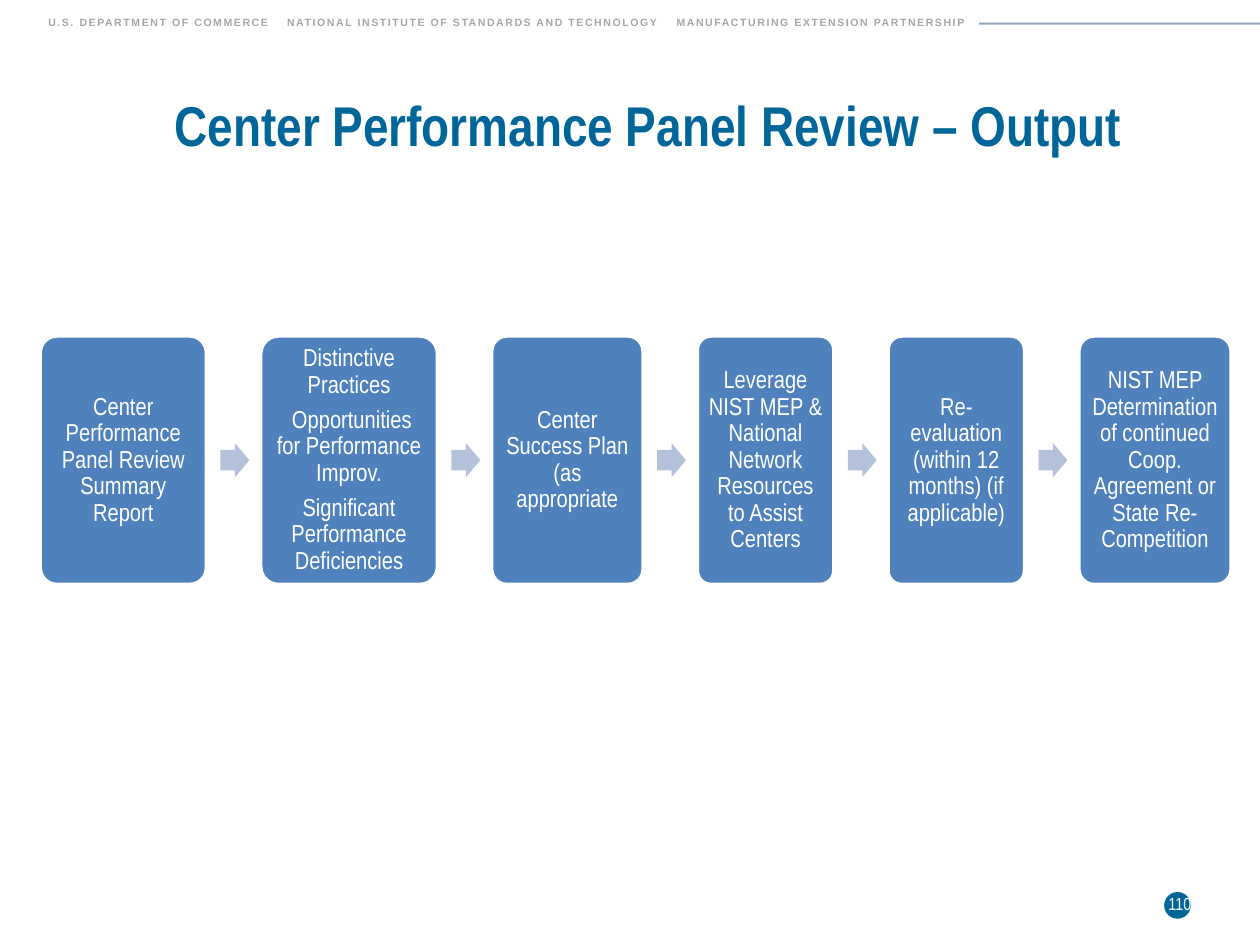
from lxml import etree
from pptx import Presentation
from pptx.dml.color import RGBColor
from pptx.enum.shapes import MSO_CONNECTOR, MSO_SHAPE
from pptx.enum.text import MSO_ANCHOR, MSO_AUTO_SIZE, PP_ALIGN
from pptx.oxml.ns import qn
from pptx.util import Pt

CENTER = PP_ALIGN.CENTER
MIDDLE, TOP = MSO_ANCHOR.MIDDLE, MSO_ANCHOR.TOP
NO_AUTOFIT = MSO_AUTO_SIZE.NONE
STRAIGHT = MSO_CONNECTOR.STRAIGHT
ELLIPSE, ROUNDED, ARROW = MSO_SHAPE.OVAL, MSO_SHAPE.ROUNDED_RECTANGLE, MSO_SHAPE.RIGHT_ARROW
NARROW = "Arial Narrow"


def color(value):
    return RGBColor.from_string(value)


def add_run(paragraph, text, size, font_name, hex_color, bold=False):
    run = paragraph.add_run()
    run.text = text
    run.font.size = Pt(size)
    run.font.name = font_name
    run.font.bold = bold
    run.font.color.rgb = color(hex_color)
    return run


presentation = Presentation()
presentation.slide_width, presentation.slide_height = Pt(720), Pt(540)
slide = presentation.slides.add_slide(presentation.slide_layouts[5])
shapes = slide.shapes

rule = shapes.add_connector(STRAIGHT, Pt(559.5), Pt(13.5), Pt(720), Pt(13.5))
rule.line.color.rgb = color("1F497D")
rule.line.width = Pt(1.25)
rule_color = rule.line._ln.find(".//" + qn("a:srgbClr"))
etree.SubElement(rule_color, qn("a:alpha"), val="50000")
etree.SubElement(rule._element.spPr, qn("a:effectLst"))

header = shapes.add_textbox(Pt(20.5), Pt(5.75), Pt(569), Pt(14.5))
header.text_frame.word_wrap = True
paragraph = header.text_frame.paragraphs[0]
tab_list = etree.SubElement(paragraph._p.get_or_add_pPr(), qn("a:tabLst"))
for position in (136.5, 359):
    etree.SubElement(tab_list, qn("a:tab"), pos=str(Pt(position)), algn="l")
agencies = "\t".join([
    "U.S. DEPARTMENT OF COMMERCE",
    "NATIONAL INSTITUTE OF STANDARDS AND TECHNOLOGY",
    "MANUFACTURING EXTENSION PARTNERSHIP",
])
run = add_run(paragraph, agencies, 6, "Arial", "A6A6A6", True)
run.font._element.set("spc", "90")

title = shapes.title
title.left, title.top, title.width, title.height = Pt(36), Pt(48.25), Pt(678), Pt(55.5)
title.text_frame.auto_size = NO_AUTOFIT
title.text_frame.vertical_anchor = TOP
title.text_frame.margin_right = Pt(16)
paragraph = title.text_frame.paragraphs[0]
paragraph.alignment = CENTER
add_run(paragraph, "Center Performance Panel Review – Output", 32, NARROW, "006699", True)

steps = [
    (95, ["Center Performance Panel Review Summary Report"]),
    (101, ["Distinctive Practices", " Opportunities for Performance Improv.",
           "Significant Performance Deficiencies"]),
    (86.5, ["Center Success Plan (as appropriate"]),
    (78, ["Leverage NIST MEP & National Network Resources to Assist Centers"]),
    (78, ["Re-evaluation (within 12 months) (if applicable)"]),
    (87, ["NIST MEP Determination of continued Coop. Agreement or State Re-Competition"]),
]
step_top, step_height, step_gap = 192, 142, 31
arrow_width, arrow_height = 16.5, 19.5
left = 23
for index, (width, texts) in enumerate(steps):
    if index:
        arrow = shapes.add_shape(
            ARROW, Pt(left - step_gap + 8), Pt(step_top + (step_height - arrow_height) / 2),
            Pt(arrow_width), Pt(arrow_height))
        arrow.adjustments[0], arrow.adjustments[1] = 0.6, 0.5
        arrow.shadow.inherit = False
        arrow.fill.solid()
        arrow.fill.fore_color.rgb = color("B3C1DB")
        arrow.line.fill.background()

    step = shapes.add_shape(ROUNDED, Pt(left), Pt(step_top), Pt(width), Pt(step_height))
    step.adjustments[0] = 0.1
    step.shadow.inherit = False
    step.fill.solid()
    step.fill.fore_color.rgb = color("4F81BD")
    step.line.color.rgb = color("FFFFFF")
    step.line.width = Pt(2)
    frame = step.text_frame
    frame.word_wrap = True
    frame.vertical_anchor = MIDDLE
    frame.margin_left = frame.margin_right = Pt(4.2)
    frame.margin_top = frame.margin_bottom = Pt(4.2)
    for number, text in enumerate(texts):
        paragraph = frame.add_paragraph() if number else frame.paragraphs[0]
        paragraph.alignment = CENTER
        paragraph.line_spacing = 0.9
        paragraph.space_after = Pt(4.9)
        add_run(paragraph, text, 14, NARROW, "FFFFFF")
    left += width + step_gap

badge = shapes.add_shape(ELLIPSE, Pt(665.25), Pt(509.75), Pt(15.25), Pt(15.25))
badge.shadow.inherit = False
badge.fill.solid()
badge.fill.fore_color.rgb = color("006699")
badge.line.fill.background()

page_number = shapes.add_textbox(Pt(656), Pt(507), Pt(36.5), Pt(28.5))
page_number.text_frame.word_wrap = True
paragraph = page_number.text_frame.paragraphs[0]
paragraph.alignment = CENTER
add_run(paragraph, "110", 10, NARROW, "FFFFFF")

presentation.save("out.pptx")
